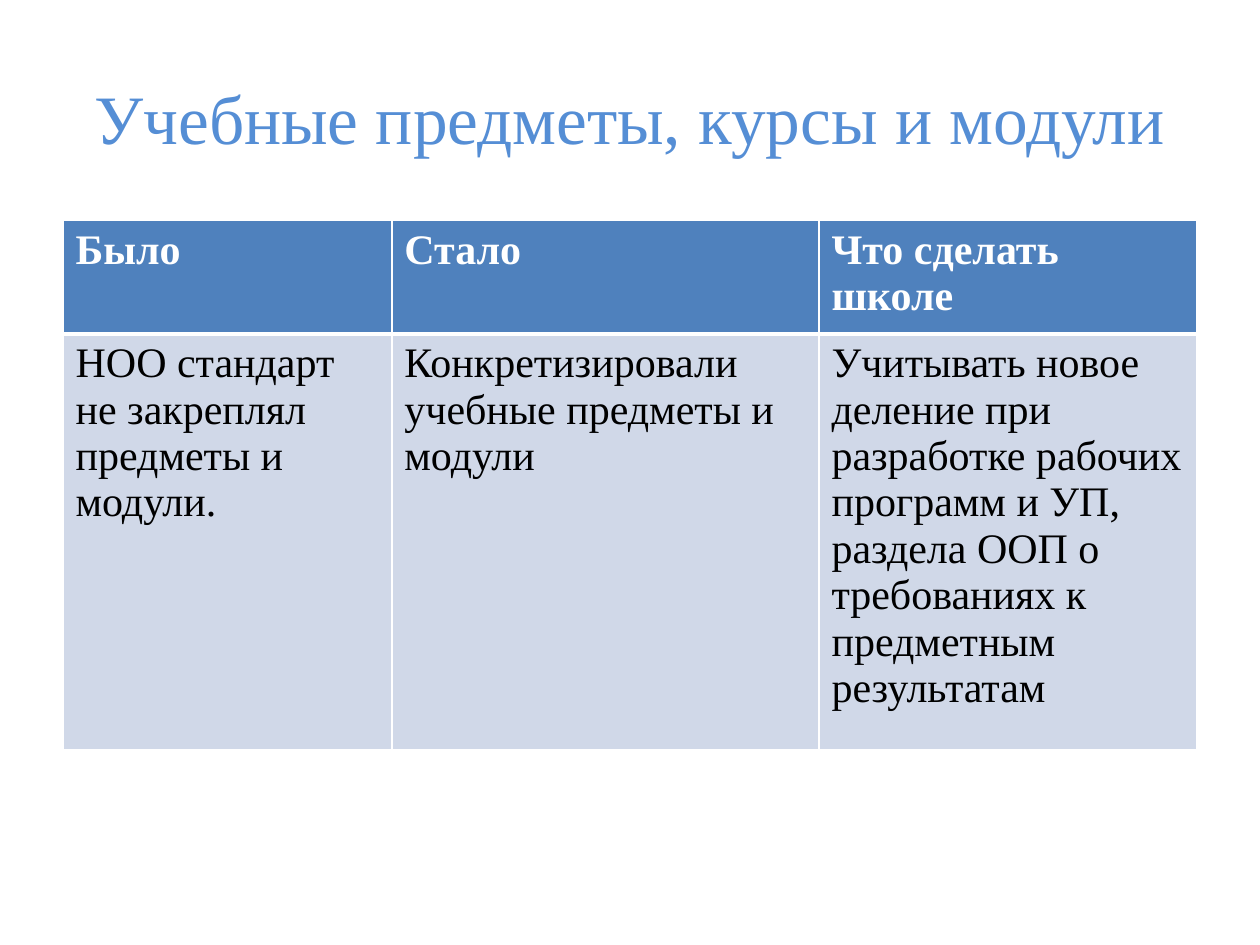
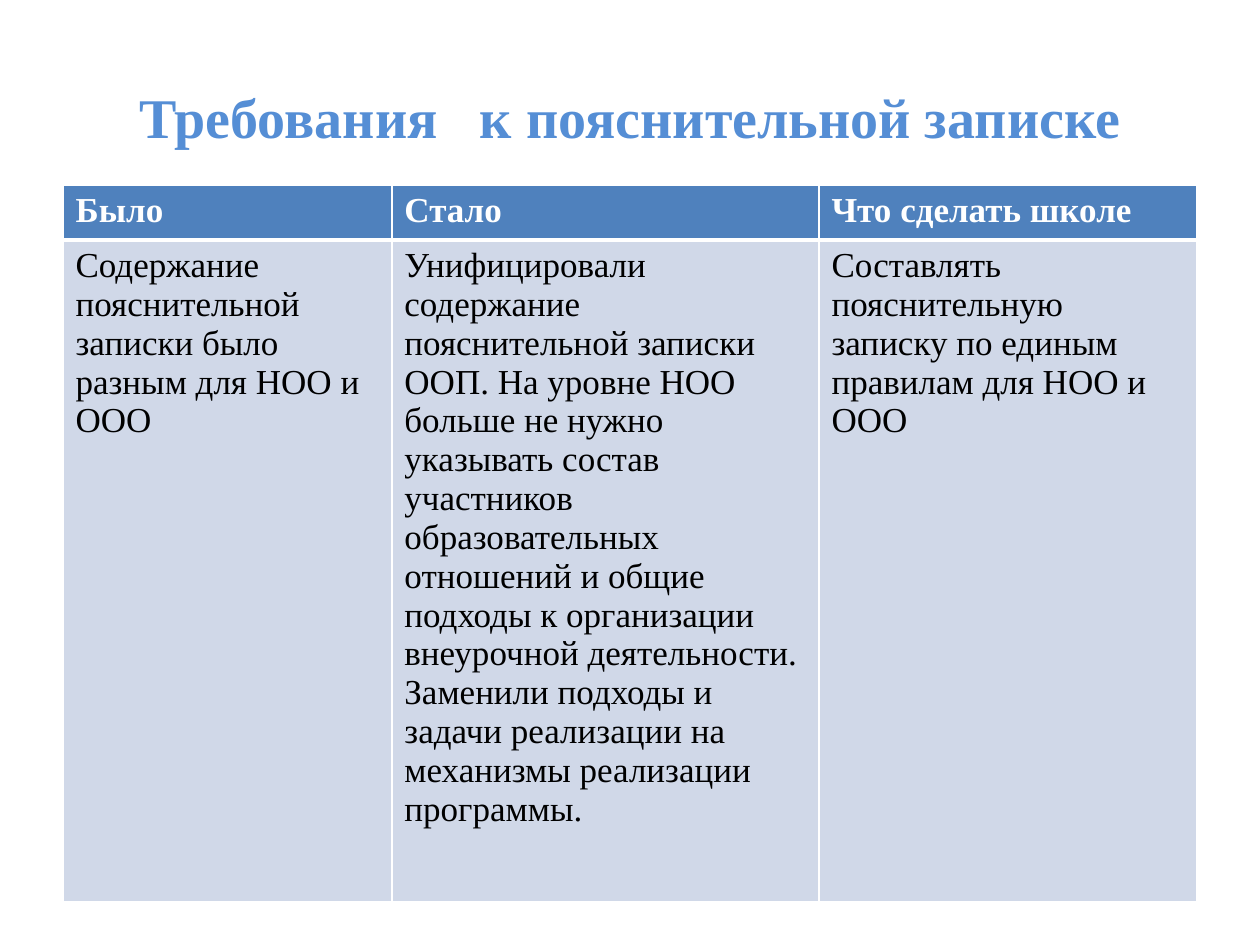
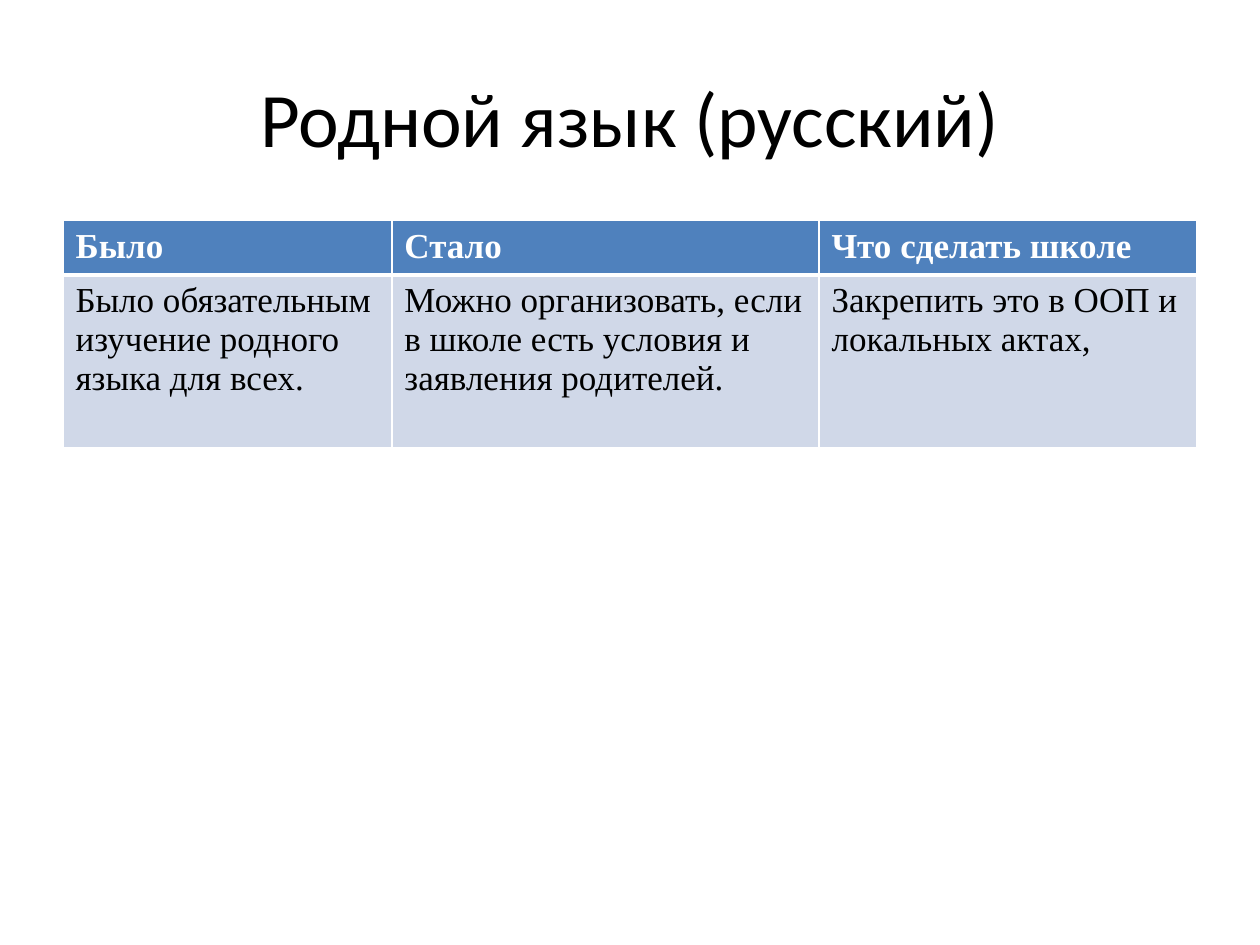
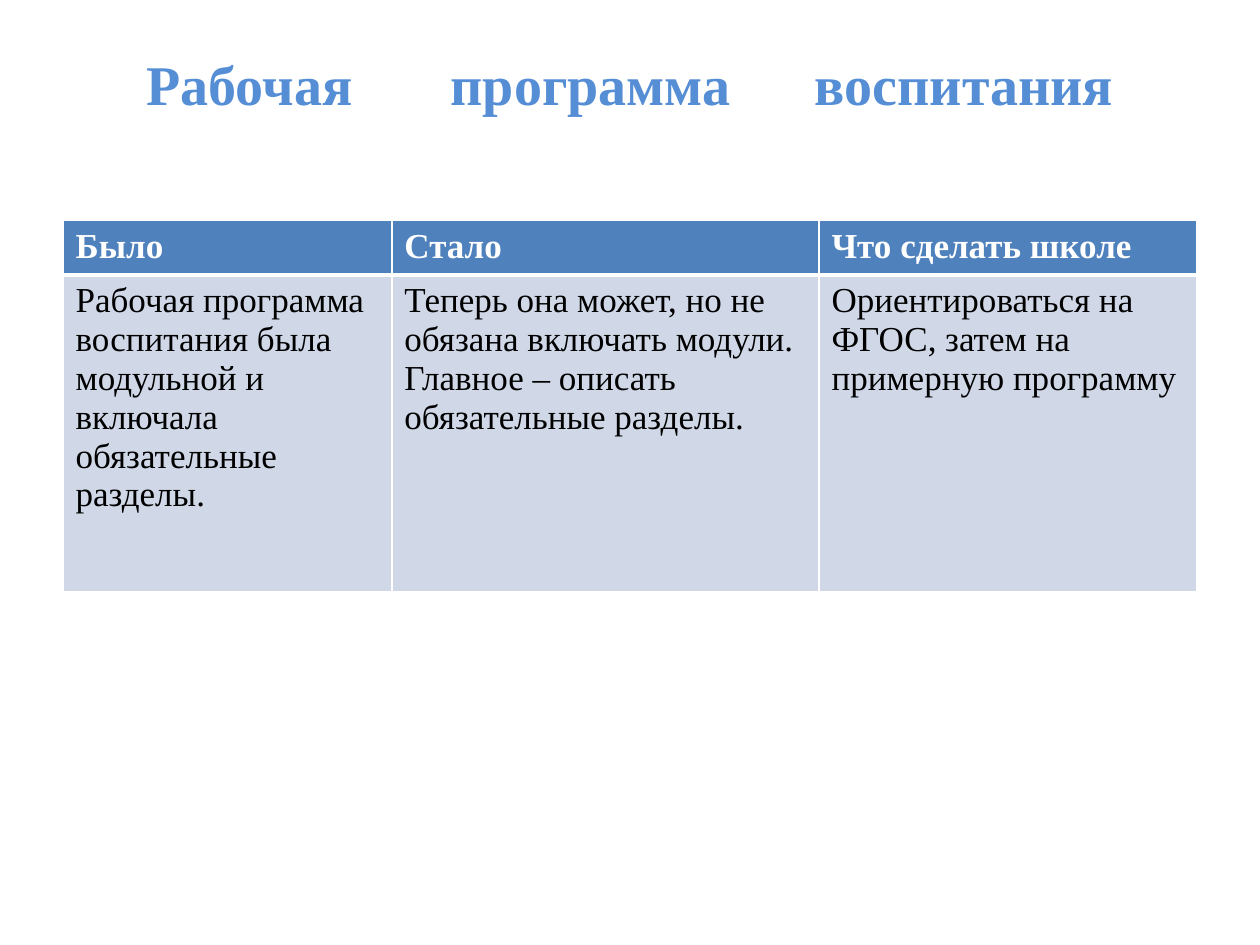
from lxml import etree
from pptx import Presentation
from pptx.dml.color import RGBColor
from pptx.enum.text import MSO_ANCHOR, PP_ALIGN
from pptx.oxml.ns import qn
from pptx.util import Inches, Pt

MIDDLE = MSO_ANCHOR.MIDDLE
CENTER = PP_ALIGN.CENTER
LEFT = PP_ALIGN.LEFT

HUES = {
    "title": "558ED5",
    "head": "4F81BD",
    "body": "D0D8E8",
    "white": "FFFFFF",
    "black": "000000",
}
SERIF = "Times New Roman"
SANS = "Calibri"
EDGE = 0.5
WIDTH = 9
COLS = (2.61, 3.39, 3)
HEADS = ("Было", "Стало", "Что сделать школе")

PAGES = [
    {
        "title": [("Учебные предметы, курсы и модули", 0)],
        "style": {"size": 39.6, "hue": "title"},
        "size": 24, "top": 1.75, "tall": 4.2, "rows": (0.53, 1.79),
        "cells": (
            "НОО стандарт не закреплял предметы и модули.",
            "Конкретизировали учебные предметы и модули",
            "Учитывать новое деление при разработке рабочих программ и УП, "
            "раздела ООП о требованиях к предметным результатам",
        ),
    },
    {
        "title": [("Требования", 0), (" ", 16), ("к пояснительной записке", 0)],
        "style": {"size": 32, "hue": "title", "bold": True},
        "size": 20, "top": 1.47, "tall": 5.87, "rows": (0.42, 5.25),
        "cells": (
            "Содержание пояснительной записки было разным для НОО и ООО",
            "Унифицировали содержание пояснительной записки ООП. На уровне НОО "
            "больше не нужно указывать состав участников образовательных "
            "отношений и общие подходы к организации внеурочной деятельности. "
            "Заменили подходы и задачи реализации на механизмы реализации "
            "программы.",
            "Составлять пояснительную записку по единым правилам для НОО и ООО",
        ),
    },
    {
        "title": [("Родной язык (русский)", 0)],
        "style": {"size": 44, "font": SANS},
        "size": 20, "top": 1.75, "tall": 1.81, "rows": (0.38, 1.37),
        "cells": (
            "Было обязательным изучение родного языка для всех.",
            "Можно организовать, если в школе есть условия и заявления родителей.",
            "Закрепить это в ООП и локальных актах,",
        ),
    },
    {
        "title": [("Рабочая", 0), (" ", 48), ("программа", 0), (" ", 40),
                  ("воспитания", 0)],
        "style": {"size": 32, "hue": "title", "bold": True},
        "lift": 0.53,
        "size": 20, "top": 1.75, "tall": 2.95, "rows": (0.39, 2.51),
        "cells": (
            "Рабочая программа воспитания была модульной и включала "
            "обязательные разделы.",
            "Теперь она может, но не обязана включать модули. Главное – "
            "описать обязательные разделы.",
            "Ориентироваться на ФГОС, затем на примерную программу",
        ),
    },
]


def write(frame, parts, size=20, font=SERIF, hue="black", bold=False, align=LEFT):
    para = frame.paragraphs[0]
    para.alignment = align
    for text, gap in parts:
        run = para.add_run()
        run.text = text
        run.font.size = Pt(size)
        run.font.name = font
        run.font.bold = bold
        run.font.color.rgb = RGBColor.from_string(HUES[hue])
        if gap:
            run.font._element.set("spc", str(gap * 100))


def border(cell, sides):
    props = cell._tc.get_or_add_tcPr()
    for spot, (side, width) in enumerate(sides.items()):
        line = etree.Element(qn(f"a:ln{side}"), w=str(Pt(width)))
        fill = etree.SubElement(line, qn("a:solidFill"))
        etree.SubElement(fill, qn("a:srgbClr"), val=HUES["white"])
        props.insert(spot, line)


def add_title(slide, page):
    box = slide.shapes.add_textbox(
        Inches(EDGE), Inches(0.3), Inches(WIDTH), Inches(1.25))
    frame = box.text_frame
    frame.word_wrap = True
    frame.vertical_anchor = MIDDLE
    frame.margin_bottom = Inches(0.05 + page.get("lift", 0))
    write(frame, page["title"], align=CENTER, **page["style"])


def add_grid(slide, page):
    shape = slide.shapes.add_table(
        2, len(COLS), Inches(EDGE), Inches(page["top"]),
        Inches(WIDTH), Inches(page["tall"]))
    table = shape.table
    for col, width in zip(table.columns, COLS):
        col.width = Inches(width)
    looks = (("head", "white", True, 1, 3), ("body", "black", False, 3, 1))
    for y, (texts, look) in enumerate(zip((HEADS, page["cells"]), looks)):
        table.rows[y].height = Inches(page["rows"][y])
        back, hue, bold, top, base = look
        for x, text in enumerate(texts):
            cell = table.cell(y, x)
            cell.fill.solid()
            cell.fill.fore_color.rgb = RGBColor.from_string(HUES[back])
            border(cell, {"L": 1, "R": 1, "T": top, "B": base})
            write(cell.text_frame, [(text, 0)], size=page["size"], hue=hue, bold=bold)
    shape.height = Inches(page["tall"])


def main():
    deck = Presentation()
    deck.slide_width = Inches(10)
    deck.slide_height = Inches(7.5)
    for page in PAGES:
        slide = deck.slides.add_slide(deck.slide_layouts[6])
        add_title(slide, page)
        add_grid(slide, page)
    deck.save("out.pptx")


if __name__ == "__main__":
    main()
